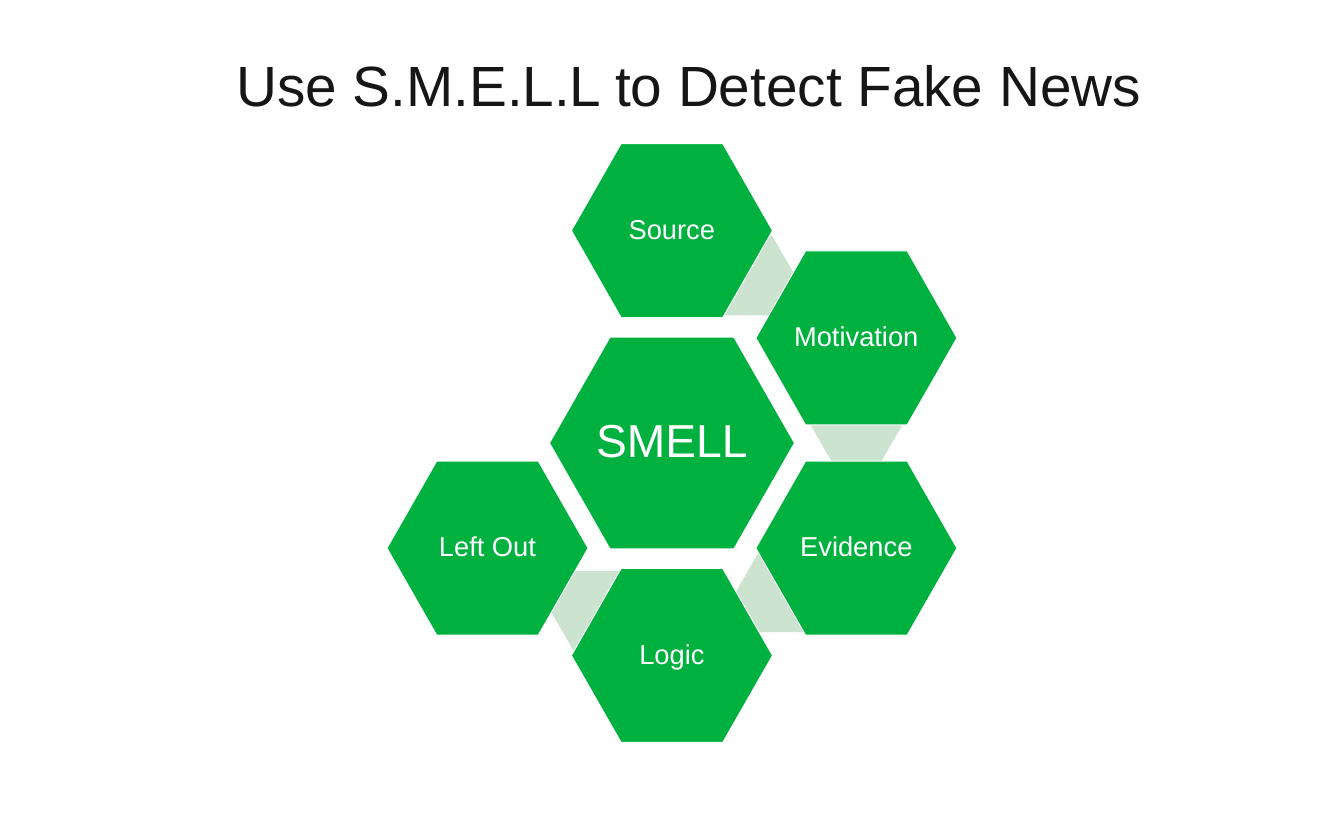
from pptx import Presentation
from pptx import util as u
from pptx.dml.color import RGBColor
from pptx.enum import shapes, text

PX = 9144  # EMU per px, 100 px to the inch
GREEN = RGBColor(0x00, 0xB1, 0x40)
PALE = RGBColor(0xCC, 0xE4, 0xCF)
WHITE = RGBColor(0xFF, 0xFF, 0xFF)
INK = RGBColor(0x17, 0x16, 0x16)

HUB_X, HUB_Y = 889, 586
COLUMN, OUTER, INNER = 244, 281, 139  # ring offsets from the hub
STEPS = [
    ("Source", 0, -OUTER),
    ("Motivation", COLUMN, -INNER),
    ("Evidence", COLUMN, INNER),
    ("Logic", 0, OUTER),
    ("Left Out", -COLUMN, INNER),
]
LINKS = [(930, 312), (1072, 509), (973, 731), (728, 755)]


def box(*lengths):
    return [u.Emu(n * PX) for n in lengths]


def write(tf, words, size, color):
    tf.vertical_anchor = text.MSO_ANCHOR.MIDDLE
    p = tf.paragraphs[0]
    p.alignment = text.PP_ALIGN.CENTER
    r = p.add_run()
    r.text = words
    r.font.name = "Arial"
    r.font.size = u.Pt(size)
    r.font.color.rgb = color
    return p


def add_hexagon(s, x, y, w, h, color, adj):
    sp = s.shapes.add_shape(shapes.MSO_SHAPE.HEXAGON, *box(x, y, w, h))
    sp.adjustments[0] = adj
    sp.shadow.inherit = False
    sp.fill.solid()
    sp.fill.fore_color.rgb = color
    sp.line.fill.background()
    return sp


def add_node(s, words, cx, cy, w, h, size, inset):
    sp = add_hexagon(s, cx - w // 2, cy - h // 2, w, h, GREEN, 0.286)
    sp.line.color.rgb = WHITE
    sp.line.width = u.Pt(0.85)
    tf = sp.text_frame
    tf.word_wrap = True
    tf.margin_left = tf.margin_right = tf.margin_top = tf.margin_bottom = u.Emu(inset * PX)
    write(tf, words, size, WHITE).line_spacing = 0.9


def add_title(s, words):
    tf = s.shapes.add_textbox(*box(297, 60, 1229, 101)).text_frame
    tf.word_wrap = False
    tf.auto_size = text.MSO_AUTO_SIZE.SHAPE_TO_FIT_TEXT
    write(tf, words, 54, INK)


def main():
    prs = Presentation()
    prs.slide_width, prs.slide_height = box(1778, 1111)
    s = prs.slides.add_slide(prs.slide_layouts[6])

    # Hub
    add_node(s, "SMELL", HUB_X, HUB_Y, 324, 280, 44, 6)

    # Pale links, partly covered by the ring
    for x, y in LINKS:
        add_hexagon(s, x, y, 122, 105, PALE, 0.289)

    # Ring of steps
    for words, dx, dy in STEPS:
        add_node(s, words, HUB_X + dx, HUB_Y + dy, 266, 230, 26, 4)

    add_title(s, "Use S.M.E.L.L to Detect Fake News")
    prs.save("out.pptx")


if __name__ == "__main__":
    main()
